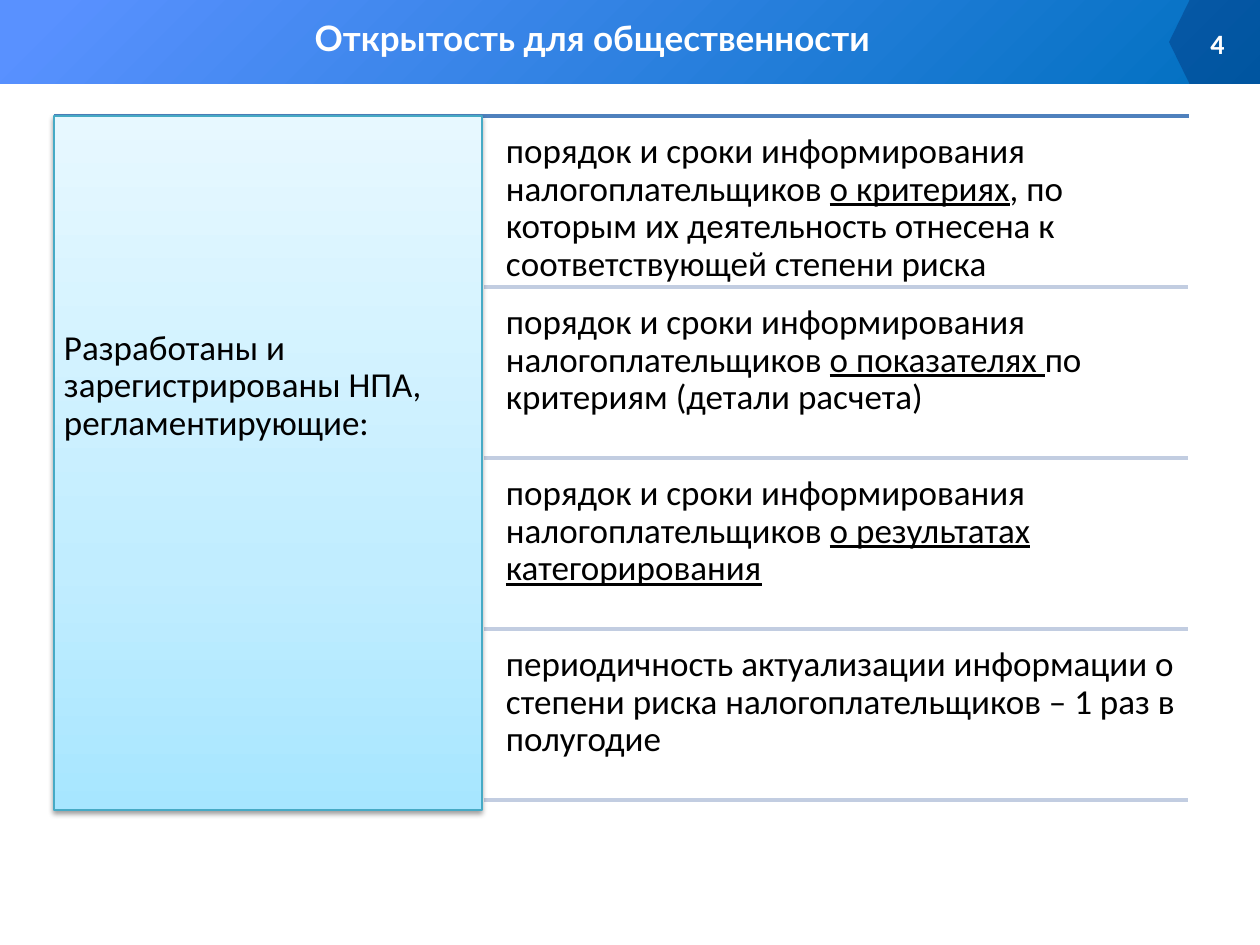
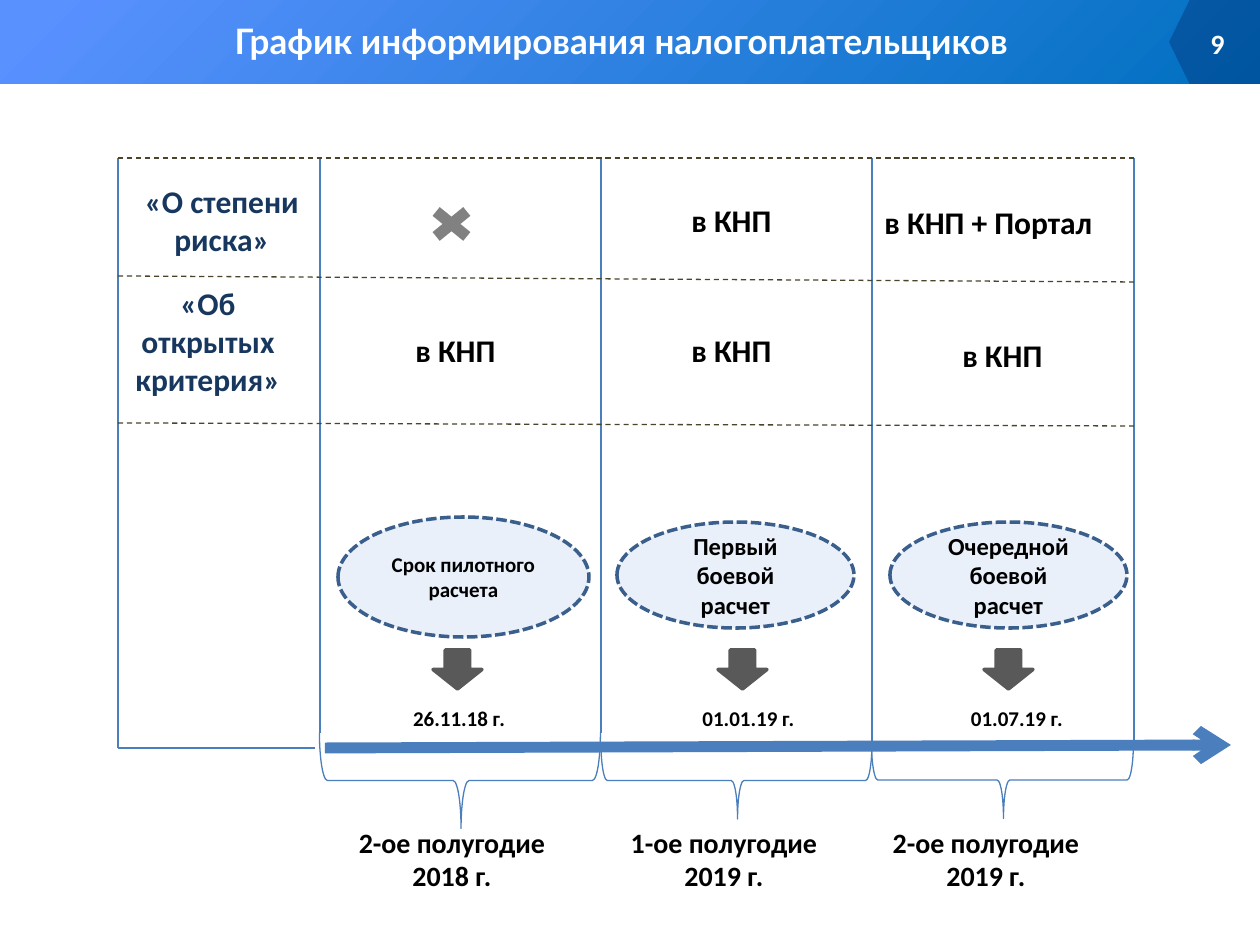
from lxml.etree import SubElement
from pptx import Presentation
from pptx.dml.color import RGBColor
from pptx.enum.dml import MSO_LINE
from pptx.enum.shapes import MSO_CONNECTOR, MSO_SHAPE
from pptx.enum.text import MSO_ANCHOR, MSO_AUTO_SIZE, PP_ALIGN
from pptx.oxml.ns import qn
from pptx.util import Inches, Pt

PX = 7257
COLORS = {
    "black": "000000", "white": "FFFFFF", "navy": "002060", "label": "17375E",
    "band_start": "5991FF", "band_end": "0070C0",
    "panel_low": "A7E6FF", "panel_mid": "C1EDFF", "panel_high": "E7F8FF",
    "panel_edge": "46AAC5", "header_rule": "4F81BD", "row_rule": "C2CDE1",
    "axis": "4B7EBC", "dash": "4A452A", "oval": "8EB4E3", "oval_edge": "3A5F8C",
    "arrow": "595959", "cross": "404040",
}
GRADIENTS = {
    "band": (315, [(4, "band_start"), (100, "band_end")]),
    "panel": (90, [(0, "panel_low"), (35, "panel_mid"), (100, "panel_high")]),
}


def draw(slide, kind, box, fill=None, opacity=100, edge=None, width=0.75, dash=None):
    shape = slide.shapes.add_shape(kind, *[v * PX for v in box])
    shape.shadow.inherit = False
    if fill in GRADIENTS:
        angle, stops = GRADIENTS[fill]
        shape.fill.gradient()
        shape.fill.gradient_angle = angle
        stop_list = shape.element.find(".//" + qn("a:gsLst"))
        stop_list.clear()
        for position, name in stops:
            stop = SubElement(stop_list, qn("a:gs"), pos=str(position * 1000))
            SubElement(stop, qn("a:srgbClr"), val=COLORS[name])
    elif fill:
        shape.fill.solid()
        shape.fill.fore_color.rgb = RGBColor.from_string(COLORS[fill])
        color = shape.element.find(".//" + qn("a:srgbClr"))
        SubElement(color, qn("a:alpha"), val=str(opacity * 1000))
    else:
        shape.fill.background()
    if edge:
        shape.line.color.rgb = RGBColor.from_string(COLORS[edge])
        shape.line.width = Pt(width)
        shape.line.dash_style = dash
    else:
        shape.line.fill.background()
    return shape


def write(shape, text, size, color="black", align=PP_ALIGN.CENTER, bold=True,
          face="Calibri", spacing=1.0, **frame_format):
    frame = shape.text_frame
    defaults = {"word_wrap": True, "auto_size": MSO_AUTO_SIZE.NONE,
                "vertical_anchor": MSO_ANCHOR.TOP}
    for key, value in (defaults | frame_format).items():
        setattr(frame, key, value)
    paragraph = frame.paragraphs[0]
    paragraph.alignment = align
    paragraph.line_spacing = spacing
    for index, part in enumerate(text.split("_")):
        if not part:
            continue
        run = paragraph.add_run()
        run.text = part
        font_format = {"name": face, "size": Pt(size), "bold": bold,
                       "underline": index % 2 == 1}
        for key, value in font_format.items():
            setattr(run.font, key, value)
        run.font.color.rgb = RGBColor.from_string(COLORS[color])


prs = Presentation()
prs.slide_width, prs.slide_height = Inches(10), Inches(7.5)

slides = []
for heading, number, left, top in [
    ("Открытость для общественности", "4", 69, 10),
    ("График информирования налогоплательщиков", "9", 98, 13),
]:
    slide = prs.slides.add_slide(prs.slide_layouts[5])
    slides.append(slide)
    draw(slide, MSO_SHAPE.RECTANGLE, (0, 0, 1260, 84), "band")
    tab = draw(slide, MSO_SHAPE.PENTAGON, (1169, 0, 91, 84), "navy", 33)
    tab.rotation = 180
    tab.adjustments[0] = 0.245
    page = slide.shapes.add_textbox(1169 * PX, 24 * PX, 68 * PX, 38 * PX)
    write(page, number, 16, "white", PP_ALIGN.RIGHT, vertical_anchor=MSO_ANCHOR.MIDDLE)
    title = slide.shapes.title
    title_box = {"left": left, "top": top, "width": 1047, "height": 55}
    for key, value in title_box.items():
        setattr(title, key, value * PX)
    write(title, heading, 20, "white", face="Lato")
    slide.shapes.element.append(title.element)
openness, schedule = slides

COLUMNS = [(320, 733), (601, 733), (872, 742), (1134, 742)]
GRID_TOP, GRID_LEFT, GRID_RIGHT, AXIS_Y = 158, 118, 1134, 748
rules = [(openness, (54, 116, 1189, 116), "header_rule", 2, None)]
rules += [(openness, (484, 287 + 171 * row, 1188, 287 + 171 * row), "row_rule", 2, None)
          for row in range(4)]
rules += [(schedule, (325, AXIS_Y, 1231, 745), "axis", 6.25, None)]
rules += [(schedule, (x, bottom, x, GRID_TOP), "axis", 0.75, None)
          for x, bottom in COLUMNS + [(GRID_LEFT, AXIS_Y)]]
rules += [(schedule, (315, AXIS_Y, GRID_LEFT, AXIS_Y), "axis", 0.75, None)]
rules += [(schedule, (GRID_LEFT, start, GRID_RIGHT, end), "dash", 0.75, MSO_LINE.DASH)
          for start, end in [(423, 426), (276, 282), (GRID_TOP, GRID_TOP)]]
for slide, ends, color, width, dash in rules:
    rule = slide.shapes.add_connector(MSO_CONNECTOR.STRAIGHT, *[v * PX for v in ends])
    rule.line.color.rgb = RGBColor.from_string(COLORS[color])
    rule.line.width = Pt(width)
    rule.line.dash_style = dash
    if width > 6:
        SubElement(rule.line._get_or_add_ln(), qn("a:tailEnd"), type="arrow")
    SubElement(rule.element.spPr, qn("a:effectLst"))

INSETS = {"margin_" + side: 10 * PX for side in ("left", "top", "right", "bottom")}
panel = draw(openness, MSO_SHAPE.RECTANGLE, (54, 116, 428, 694), "panel", edge="panel_edge")
shadow = SubElement(panel.element.spPr.find(qn("a:effectLst")), qn("a:outerShdw"),
                    blurRad=str(Pt(3.1)), dist=str(Pt(1.6)), dir="5400000", rotWithShape="0")
shadow_color = SubElement(shadow, qn("a:srgbClr"), val=COLORS["black"])
SubElement(shadow_color, qn("a:alpha"), val="38000")
write(panel, "Разработаны и зарегистрированы НПА, регламентирующие:", 20,
      align=PP_ALIGN.LEFT, bold=False, spacing=0.9, **(INSETS | {"margin_top": 214 * PX}))

for row, regulation in enumerate([
    "порядок и сроки информирования налогоплательщиков _о критериях_, "
    "по которым их деятельность отнесена к соответствующей степени риска",
    "порядок и сроки информирования налогоплательщиков _о показателях _"
    "по критериям (детали расчета)",
    "порядок и сроки информирования налогоплательщиков _о результатах категорирования_",
    "периодичность актуализации информации о степени риска налогоплательщиков "
    "– 1 раз в полугодие",
]):
    item = openness.shapes.add_textbox(496 * PX, (123 + 171 * row) * PX, 692 * PX, 163 * PX)
    write(item, regulation, 20, align=PP_ALIGN.LEFT, bold=False, spacing=0.9, **INSETS)

captions = []
for (left, top), (right, _), depth, oval_box, stage, size, arrow_x, date, date_box, half, half_x in [
    (COLUMNS[0], COLUMNS[1], 96, (338, 517, 251, 120), "Срок пилотного расчета", 12,
     433, "26.11.18 г.", (354, 699, 210, 38), "2-ое полугодие 2018 г.", 338),
    (COLUMNS[1], COLUMNS[2], 77, (617, 522, 237, 106), "Первый боевой расчет", 14,
     718, "01.01.19 г.", (630, 699, 237, 38), "1-ое полугодие 2019 г.", 610),
    (COLUMNS[2], COLUMNS[3], 77, (890, 522, 237, 106), "Очередной боевой расчет", 14,
     984, "01.07.19 г.", (916, 699, 202, 38), "2-ое полугодие 2019 г.", 872),
]:
    span = right - left
    brace_top = 819 - 77 if depth == 77 else top
    brace_box = ((left + right - depth) // 2, brace_top + (depth - span) // 2, depth, span)
    brace = draw(schedule, MSO_SHAPE.LEFT_BRACE, brace_box, edge="axis")
    brace.rotation = 270
    brace.adjustments[0], brace.adjustments[1] = 0.083, 0.504
    oval = draw(schedule, MSO_SHAPE.OVAL, oval_box, "oval", 19, "oval_edge", 2,
                MSO_LINE.SQUARE_DOT)
    write(oval, stage, size, vertical_anchor=MSO_ANCHOR.MIDDLE)
    draw(schedule, MSO_SHAPE.DOWN_ARROW, (arrow_x, 650, 49, 39), "arrow", edge="arrow", width=2)
    captions += [(date, 12, "black", PP_ALIGN.CENTER, date_box),
                 (half, 16, "black", PP_ALIGN.CENTER, (half_x, 819, 228, 81))]

draw(schedule, MSO_SHAPE.MATH_MULTIPLY, (422, 200, 59, 48), "cross", 66)

captions += [("в КНП", 18, "black", PP_ALIGN.LEFT, (x, y, 116, 50))
             for x, y in [(679, 195), (403, 325), (679, 325), (950, 330)]]
captions += [
    ("в КНП + Портал", 18, "black", PP_ALIGN.LEFT, (872, 197, 286, 50)),
    ("«О степени риска»", 18, "label", PP_ALIGN.CENTER, (121, 176, 202, 89)),
    ("«Об открытых критерия»", 18, "label", PP_ALIGN.CENTER, (103, 278, 210, 127)),
]
for text, size, color, align, box in captions:
    caption = schedule.shapes.add_textbox(*[v * PX for v in box])
    write(caption, text, size, color, align)

prs.save("out.pptx")
